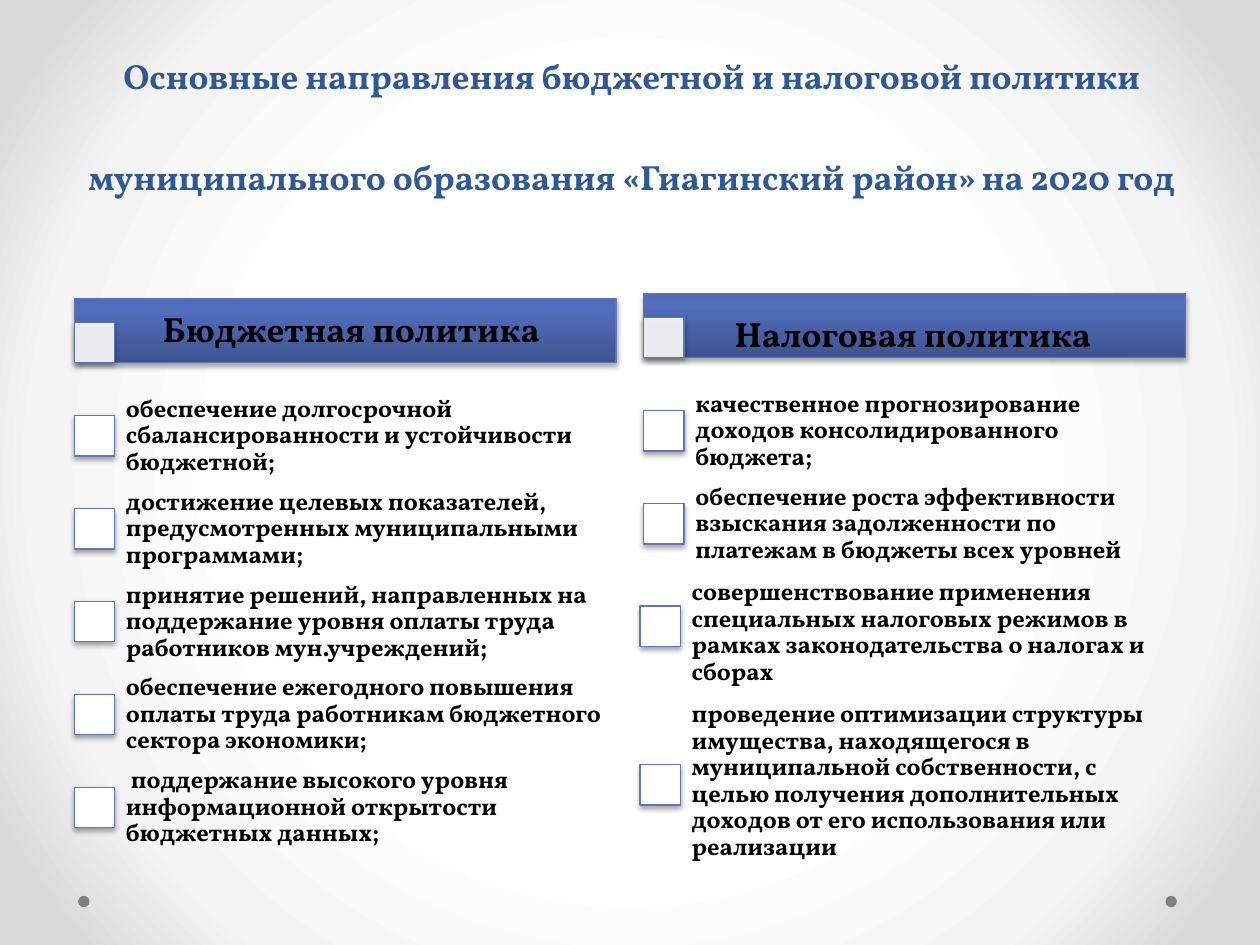
from pptx import Presentation
from pptx import util as u
from pptx.dml.color import RGBColor
from pptx.enum import shapes, text
from pptx.oxml import parse_xml
from pptx.oxml.ns import nsdecls, qn

FONT = "Vollkorn"
COLORS = {"title": "2F5897", "text": "000000", "line": "6076B4",
          "box": "FFFFFF", "dot": "808080", "shadow": "000000"}
BACKGROUND_STOPS = [(50, "FFFFFF"), (76, "F4F4F4"), (92, "DADADA")]
HEADER_STOPS = [(0, "3E5490"), (80, "516DBB"), (100, "4F6CBE")]
BACKGROUND_SHADE = ('<a:path path="circle">'
                    '<a:fillToRect l="50000" t="50000" r="50000" b="50000"/></a:path>')
HEADER_SHADE = '<a:lin ang="16200000" scaled="0"/>'

TITLE = ("Основные направления бюджетной и налоговой политики "
         "муниципального образования «Гиагинский район» на 2020 год")
BOX = 0.32
BAR_WIDTH, BAR_HEIGHT = 4.3, 0.51
ITEM_WIDTH, ITEM_HEIGHT = 4, 0.74
ITEM_INDENT = 0.3
ROW_PITCH = 0.737

# Items: text, shift from the column's left edge, box top, text top.
# None stands for the regular row position.
COLUMNS = [
    {"left": 0.59, "top": 2.37, "header": "Бюджетная политика",
     "header_at": (1.25, 2.25, 3.51, 0.75),
     "items": [
         ("обеспечение долгосрочной сбалансированности и устойчивости бюджетной;",
          0, None, None),
         ("достижение целевых показателей, предусмотренных муниципальными программами;",
          0, None, None),
         ("принятие решений, направленных на поддержание уровня оплаты труда "
          "работников мун.учреждений;", 0, None, None),
         ("обеспечение ежегодного повышения оплаты труда работникам бюджетного "
          "сектора экономики;", 0, None, None),
         (" поддержание высокого уровня информационной открытости бюджетных данных;",
          0, None, None)]},
    {"left": 5.11, "top": 2.33, "header": "Налоговая политика",
     "header_at": (5.79, 2.33, 3.51, 0.67),
     "items": [
         ("качественное прогнозирование доходов консолидированного бюджета;",
          0, None, None),
         ("обеспечение роста эффективности взыскания задолженности по платежам "
          "в бюджеты всех уровней", 0, None, None),
         ("совершенствование применения специальных налоговых режимов в рамках "
          "законодательства о налогах и сборах", -0.03, 4.81, 4.65),
         ("проведение оптимизации структуры имущества, находящегося в муниципальной "
          "собственности, с целью получения дополнительных доходов от его "
          "использования или реализации", -0.03, 6.07, 5.83)]},
]


def color(name):
    return RGBColor.from_string(COLORS[name])


def make_gradient(solid, stops, shade):
    """Put a gradient in the place of a solidFill element."""
    marks = "".join(f'<a:gs pos="{position * 1000}"><a:srgbClr val="{value}"/></a:gs>'
                    for position, value in stops)
    solid.getparent().replace(solid, parse_xml(
        f'<a:gradFill {nsdecls("a")} rotWithShape="1"><a:gsLst>{marks}</a:gsLst>'
        f'{shade}</a:gradFill>'))


def add_filled(slide, kind, at, fill):
    shape = slide.shapes.add_shape(kind, *map(u.Inches, at))
    shape.shadow.inherit = False
    shape.fill.solid()
    shape.fill.fore_color.rgb = color(fill)
    shape.line.fill.background()
    return shape


def add_framed(slide, at, alpha=100, stops=None):
    """Add a rectangle with a thin line and a soft shadow."""
    shape = add_filled(slide, shapes.MSO_SHAPE.RECTANGLE, at, "box")
    properties = shape.element.spPr
    solid = properties.find(qn("a:solidFill"))
    if stops:
        make_gradient(solid, stops, HEADER_SHADE)
    elif alpha < 100:
        solid[0].append(parse_xml(f'<a:alpha {nsdecls("a")} val="{alpha * 1000}"/>'))
    shape.line.color.rgb = color("line")
    shape.line.width = u.Pt(0.75)
    properties.find(qn("a:effectLst")).append(parse_xml(
        f'<a:outerShdw {nsdecls("a")} blurRad="{u.Pt(3.1)}" dist="{u.Pt(1.8)}" '
        f'dir="5400000" rotWithShape="0"><a:srgbClr val="{COLORS["shadow"]}">'
        '<a:alpha val="35000"/></a:srgbClr></a:outerShdw>'))


def add_text(slide, at, words, size, margins, spacing=0.9, name="text",
             anchor=text.MSO_ANCHOR.MIDDLE, align=text.PP_ALIGN.LEFT):
    frame = slide.shapes.add_textbox(*map(u.Inches, at)).text_frame
    frame.word_wrap = True
    frame.auto_size = text.MSO_AUTO_SIZE.NONE
    frame.vertical_anchor = anchor
    frame.margin_left = frame.margin_right = u.Inches(margins[0])
    frame.margin_top = frame.margin_bottom = u.Inches(margins[1])
    paragraph = frame.paragraphs[0]
    paragraph.alignment = align
    paragraph.line_spacing = spacing
    run = paragraph.add_run()
    run.text = words
    run.font.name = FONT
    run.font.size = u.Pt(size)
    run.font.bold = True
    run.font.color.rgb = color(name)


def add_column(slide, column):
    left, top = column["left"], column["top"]
    add_framed(slide, (left, top, BAR_WIDTH, BAR_HEIGHT), stops=HEADER_STOPS)
    add_framed(slide, (left, top + BAR_HEIGHT - BOX, BOX, BOX), alpha=90)
    add_text(slide, column["header_at"], column["header"], 20, (0.04, 0.03))
    for row, (words, shift, box_top, text_top) in enumerate(column["items"]):
        regular = top + 0.72 + row * ROW_PITCH
        box_top = box_top or regular + (ITEM_HEIGHT - BOX) / 2
        text_top = text_top or regular
        add_framed(slide, (left + shift, box_top, BOX, BOX))
        add_text(slide, (left + shift + ITEM_INDENT, text_top, ITEM_WIDTH, ITEM_HEIGHT),
                 words, 14, (0.11, 0.11))


def main():
    presentation = Presentation()
    presentation.slide_width, presentation.slide_height = u.Inches(10), u.Inches(7.5)
    slide = presentation.slides.add_slide(presentation.slide_layouts[6])
    slide.background.fill.solid()
    make_gradient(next(slide.element.iter(qn("a:solidFill"))),
                  BACKGROUND_STOPS, BACKGROUND_SHADE)
    for left in (9.25, 0.62):
        add_filled(slide, shapes.MSO_SHAPE.OVAL, (left, 7.11, 0.09, 0.09), "dot")
    for column in COLUMNS:
        add_column(slide, column)
    add_text(slide, (-0.28, 0.84, 10.59, 0.78), TITLE, 20, (0.1, 0.05), u.Pt(58),
             "title", text.MSO_ANCHOR.BOTTOM, text.PP_ALIGN.CENTER)
    presentation.save("out.pptx")


if __name__ == "__main__":
    main()
